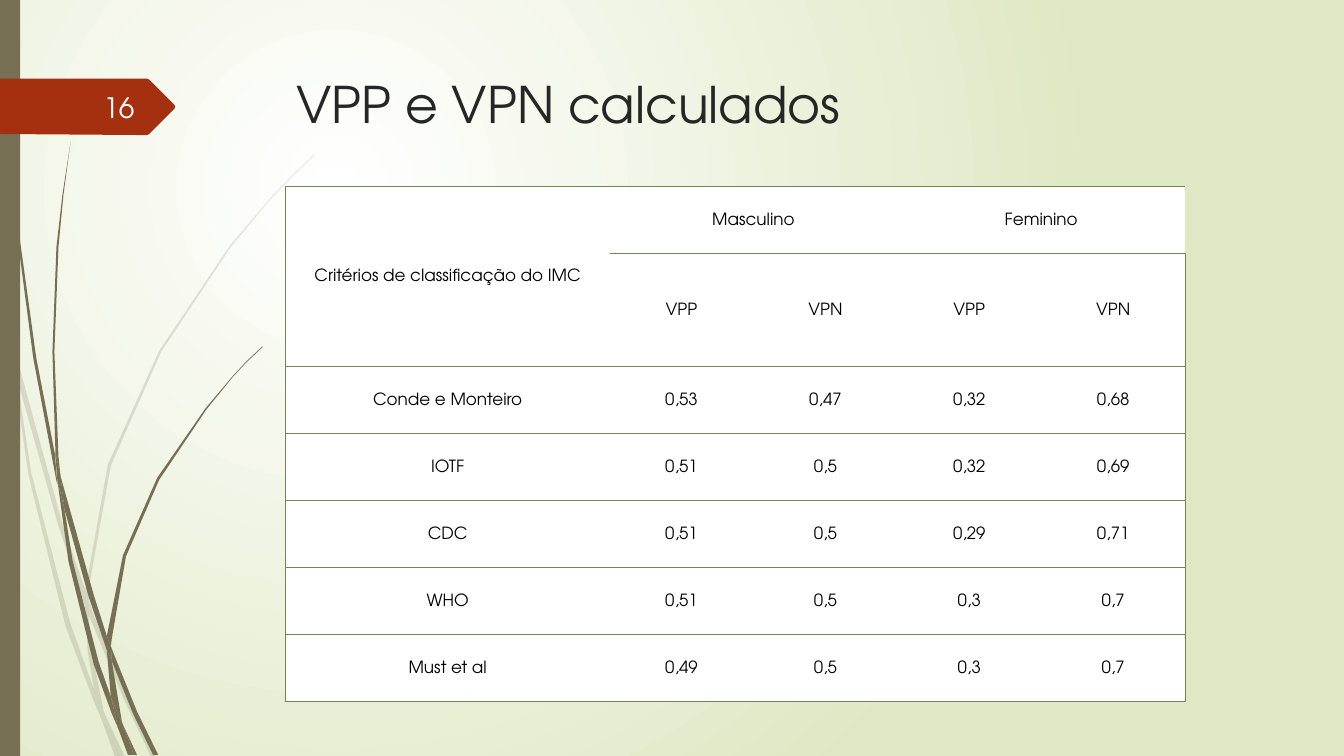
from dataclasses import dataclass

from pptx import Presentation
from pptx.dml.color import RGBColor as Color
from pptx.enum.text import MSO_ANCHOR as Anchor, PP_ALIGN as Align
from pptx.oxml import parse_xml
from pptx.oxml.ns import nsdecls, qn
from pptx.util import Pt


@dataclass(frozen=True)
class Theme:
    """Colours, font and type sizes of the slide."""
    font: str = "TeX Gyre Adventor"
    glow: str = "FFFFFF"
    green: str = "DFE8C4"
    grass: str = "766F54"
    red: str = "A53010"
    rule: str = "728653"
    cell: str = "FFFFFF"
    ink: str = "000000"
    title: str = "262626"
    number: str = "FEFFFF"
    big: int = 36
    mid: int = 20
    small: int = 12


THEME = Theme()
UNIT = Pt(0.72)

PALE = [
    [(11, 350), (9, 322), (0, 282), (0, 299), (10, 344)],
    [(58, 522), (84, 599), (85, 586), (62, 520), (14, 345), (17, 376)],
    [(92, 607), (88, 596), (88, 610), (123, 694), (150, 751), (155, 751), (127, 692)],
    [(119, 751), (124, 751), (105, 711)],
    [(93, 683), (70, 619), (31, 469), (17, 376), (11, 350), (28, 470), (65, 621),
     (92, 693), (101, 714), (99, 707)],
    [(84, 599), (87, 646), (93, 683), (96, 692), (105, 711), (103, 706), (91, 646),
     (88, 610), (88, 608)],
    [(88, 584), (110, 462), (160, 349), (229, 245), (268, 198), (290, 175), (312, 154),
     (312, 153), (289, 175), (268, 197), (228, 244), (158, 348), (107, 461), (85, 584),
     (85, 586), (88, 596)],
    [(101, 714), (114, 751), (119, 751)],
    [(88, 608), (88, 610), (88, 596), (85, 586), (84, 599)],
    [(96, 692), (93, 683), (99, 707), (101, 714), (119, 751), (105, 711)],
]
DARK = [
    [(7, 110), (17, 233), (33, 355), (56, 477), (57, 481), (55, 457), (55, 453),
     (36, 355), (19, 232), (8, 109), (5, 48), (4, 0), (3, 0), (4, 48)],
    [(88, 592), (106, 645), (106, 633), (106, 631), (93, 590), (60, 472), (64, 505)],
    [(113, 649), (110, 641), (111, 656), (132, 708), (152, 749), (157, 749), (136, 706)],
    [(110, 691), (98, 657), (72, 556), (64, 505), (57, 477), (68, 557), (93, 659),
     (111, 708), (117, 722), (116, 717)],
    [(60, 472), (58, 453), (54, 349), (58, 245), (63, 193), (70, 141), (62, 193),
     (56, 245), (52, 349), (55, 449)],
    [(133, 749), (136, 749), (122, 719)],
    [(57, 477), (64, 505), (60, 472), (55, 449), (55, 453)],
    [(111, 633), (125, 552), (158, 476), (205, 406), (231, 374), (245, 359), (261, 344),
     (260, 344), (245, 358), (231, 373), (204, 405), (156, 474), (122, 551), (106, 631),
     (110, 641)],
    [(117, 722), (127, 749), (131, 749)],
    [(106, 645), (110, 691), (116, 706), (122, 719), (121, 716), (111, 656), (109, 651)],
    [(106, 645), (109, 651), (111, 656), (110, 641), (106, 631), (106, 633)],
    [(116, 706), (110, 691), (116, 717), (117, 722), (130, 749), (133, 749), (122, 719)],
]
TAG = [(173, 108), (148, 133), (146, 134), (136, 134), (0, 133), (0, 78), (146, 78),
       (148, 79), (173, 104), (174, 106)]
ROWS = [
    ["Critérios de classificação do IMC", "Masculino", "", "Feminino", ""],
    ["", "VPP", "VPN", "VPP", "VPN"],
    ["Conde e Monteiro", "0,53", "0,47", "0,32", "0,68"],
    ["IOTF", "0,51", "0,5", "0,32", "0,69"],
    ["CDC", "0,51", "0,5", "0,29", "0,71"],
    ["WHO", "0,51", "0,5", "0,3", "0,7"],
    ["Must et al", "0,49", "0,5", "0,3", "0,7"],
]


def paint(shape, tint, alpha=None):
    """Fill a shape without line or shadow, optionally see-through."""
    shape.shadow.inherit = False
    shape.line.fill.background()
    shape.fill.solid()
    shape.fill.fore_color.rgb = Color.from_string(tint)
    if alpha:
        node = shape.element.spPr.find(".//" + qn("a:srgbClr"))
        node.append(parse_xml(f'<a:alpha {nsdecls("a")} val="{alpha * 1000}"/>'))


def outline(shapes, points, tint, alpha=None):
    """Draw a closed outline through points in hundredths of an inch."""
    pen = shapes.build_freeform(*points[0], scale=UNIT)
    pen.add_line_segments(points[1:], close=True)
    paint(pen.convert_to_shape(), tint, alpha)


def grass(slide, blades, alpha=None):
    """Draw a group of grass blades."""
    group = slide.shapes.add_group_shape()
    for blade in blades:
        outline(group.shapes, blade, THEME.grass, alpha)


def write(frame, words, size, tint, align):
    """Put one styled run in the first paragraph of a text frame."""
    line = frame.paragraphs[0]
    line.alignment = align
    run = line.add_run()
    run.text = words
    run.font.name = THEME.font
    run.font.size = Pt(size)
    run.font.color.rgb = Color.from_string(tint)


def label(slide, box, words, size, tint, align, anchor):
    """Add a wrapped text box."""
    frame = slide.shapes.add_textbox(*map(Pt, box)).text_frame
    frame.word_wrap = True
    frame.vertical_anchor = anchor
    write(frame, words, size, tint, align)


def border(cell, sides):
    """Rule the named sides of a cell and clear the others."""
    props = cell._tc.get_or_add_tcPr()
    for side in "LRTB":
        fill = "<a:noFill/>"
        if side in sides:
            fill = f'<a:solidFill><a:srgbClr val="{THEME.rule}"/></a:solidFill>'
        props.append(parse_xml(f'<a:ln{side} {nsdecls("a")} w="{Pt(1)}">{fill}</a:ln{side}>'))


def sides(row, col):
    """Name the ruled sides of the cell at a row and column."""
    left = "L" if col == 0 else ""
    right = "R" if col == len(ROWS[0]) - 1 else ""
    top = "" if (row, col) == (1, 0) else "T"
    base = "" if (row, col) == (0, 0) else "B"
    return left + right + top + base


def chart(slide):
    """Add the table of predictive values."""
    count, width = len(ROWS), len(ROWS[0])
    table = slide.shapes.add_table(count, width, Pt(204.2), Pt(133.2), Pt(642.4), Pt(368)).table
    table.first_row = table.horz_banding = False
    for i, col in enumerate(table.columns):
        col.width = Pt(231.2 if i == 0 else 102.8)
    for i, row in enumerate(table.rows):
        row.height = Pt(80.8 if i == 1 else 47.9)
    for i, row in enumerate(ROWS):
        for j, words in enumerate(row):
            cell = table.cell(i, j)
            border(cell, sides(i, j))
            cell.fill.solid()
            cell.fill.fore_color.rgb = Color.from_string(THEME.cell)
            cell.vertical_anchor = Anchor.MIDDLE
            cell.margin_left = cell.margin_right = cell.margin_top = Pt(0.7)
            cell.margin_bottom = 0
            if words:
                write(cell.text_frame, words, THEME.small, THEME.ink, Align.CENTER)
    for start, end in [((0, 0), (1, 0)), ((0, 1), (0, 2)), ((0, 3), (0, 4))]:
        table.cell(*start).merge(table.cell(*end))


def backdrop(slide):
    """Set the round glow behind the slide."""
    fill = slide.background.fill
    fill.gradient()
    for stop, tint in zip(fill.gradient_stops, (THEME.glow, THEME.green)):
        stop.color.rgb = Color.from_string(tint)
    line = slide.element.find(".//" + qn("a:lin"))
    line.getparent().replace(line, parse_xml(
        f'<a:path {nsdecls("a")} path="circle">'
        '<a:fillToRect l="50000" t="50000" r="100000" b="100000"/></a:path>'))


def main():
    """Build the slide and save it."""
    deck = Presentation()
    deck.slide_width, deck.slide_height = Pt(960), Pt(540)
    slide = deck.slides.add_slide(deck.slide_layouts[6])
    backdrop(slide)
    grass(slide, PALE, 20)
    grass(slide, DARK)
    paint(slide.shapes.add_shape(1, 0, 0, Pt(14.4), Pt(540)), THEME.grass)
    outline(slide.shapes, TAG, THEME.red)
    chart(slide)
    label(slide, (41.8, 61.9, 61.2, 28.8), "16", THEME.mid, THEME.number,
          Align.RIGHT, Anchor.MIDDLE)
    label(slide, (204.5, 49, 702, 100.8), "VPP e VPN calculados", THEME.big, THEME.title,
          Align.LEFT, Anchor.TOP)


    deck.save("out.pptx")


if __name__ == "__main__":
    main()
